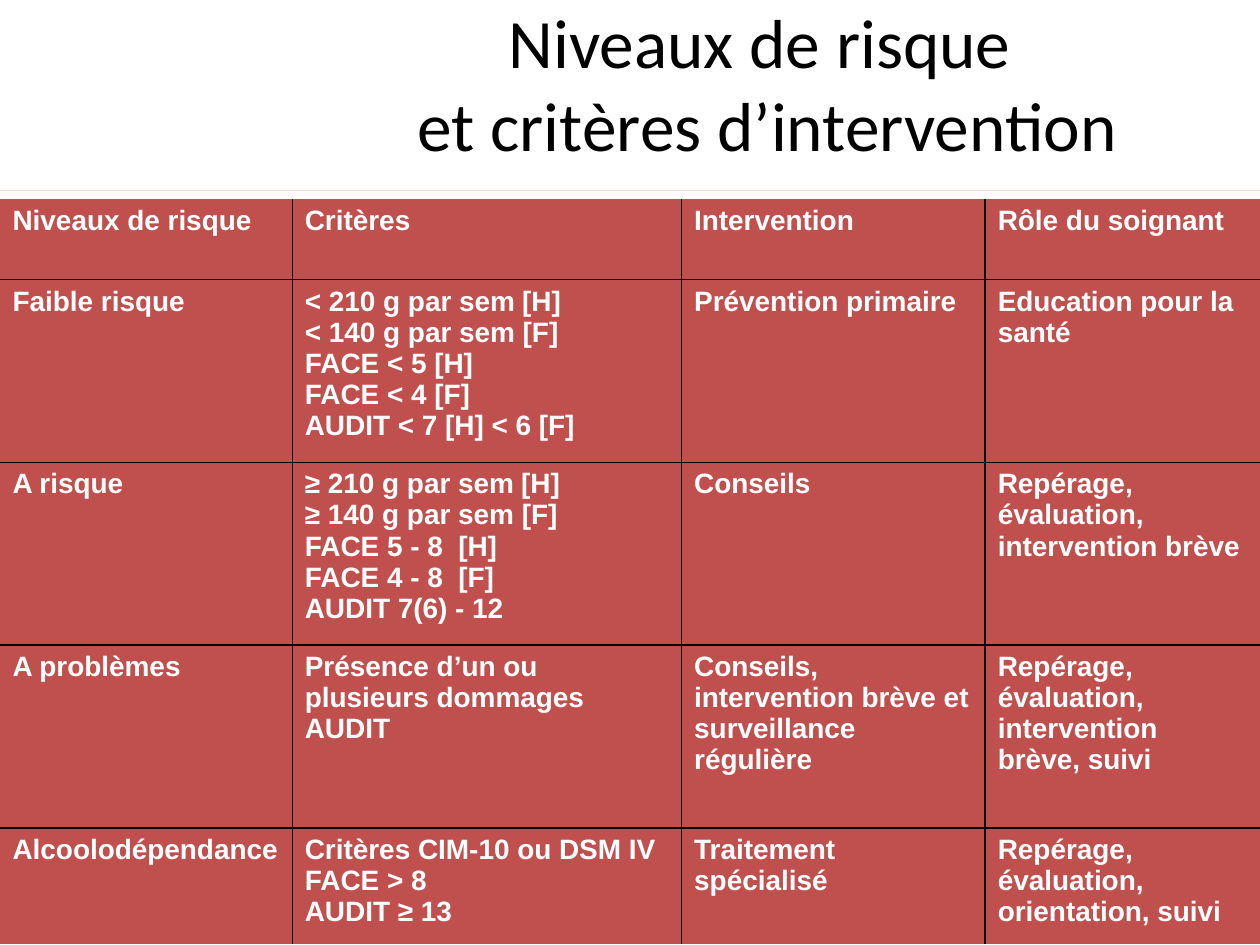
from dataclasses import dataclass

from lxml.etree import SubElement
from pptx import Presentation
from pptx.dml.color import RGBColor
from pptx.enum.shapes import MSO_SHAPE as Shape
from pptx.enum.text import MSO_ANCHOR as Anchor, MSO_AUTO_SIZE as AutoSize, PP_ALIGN as Align
from pptx.oxml.ns import qn
from pptx.util import Inches, Pt


@dataclass(frozen=True)
class Theme:
    title_font: str = "Calibri"
    table_font: str = "Arial"
    title_size: float = 39.6
    table_size: float = 16
    gap_size: float = 14
    black: str = "000000"
    white: str = "FFFFFF"
    cell: str = "C0504D"
    rule: str = "CC0000"
    border: float = 1


THEME = Theme()
TITLE = "Niveaux de risque\v et critères d’intervention"
COLUMN_WIDTHS = [2.32, 3.09, 2.41, 2.18]
ROW_HEIGHTS = [0.64, 1.45, 1.45, 1.45, 0.92]
ROWS = [
    ["Niveaux de risque", "Critères", "Intervention", "Rôle du soignant"],
    [
        "Faible risque",
        [
            ("< 210 g par sem", " ", "[H]"),
            "< 140 g par sem [F]",
            "FACE < 5 [H]",
            "FACE < 4 [F]",
            "AUDIT < 7 [H] < 6 [F]",
        ],
        "Prévention primaire",
        "Education pour la santé",
    ],
    [
        "A risque",
        [
            ("≥ 210 g par sem", " ", "[H]"),
            "≥ 140 g par sem [F]",
            "FACE 5 - 8  [H]",
            "FACE 4 - 8  [F]",
            "AUDIT 7(6) - 12",
        ],
        "Conseils",
        "Repérage, évaluation, intervention brève",
    ],
    [
        "A problèmes",
        ["Présence d’un ou plusieurs dommages", "AUDIT"],
        "Conseils, \vintervention brève et surveillance régulière",
        "Repérage,\vévaluation, intervention brève, suivi",
    ],
    [
        "Alcoolodépendance",
        ["Critères CIM-10 ou DSM IV", "FACE > 8", "AUDIT ≥ 13"],
        "Traitement spécialisé",
        "Repérage,\vévaluation, orientation, suivi",
    ],
]


def add_run(paragraph, text, *, font, size, color, bold=False):
    run = paragraph.add_run()
    run.text = text
    run.font.name = font
    run.font.size = Pt(size)
    run.font.bold = bold
    run.font.color.rgb = RGBColor.from_string(color)


def write_text(text_frame, content, *, align=Align.LEFT, **style):
    paragraphs = [content] if isinstance(content, str) else content
    for index, pieces in enumerate(paragraphs):
        paragraph = text_frame.paragraphs[0] if index == 0 else text_frame.add_paragraph()
        paragraph.alignment = align
        for piece in [pieces] if isinstance(pieces, str) else pieces:
            is_gap = piece == " "
            run_style = {**style, "size": THEME.gap_size, "bold": False} if is_gap else style
            for line_index, line in enumerate(piece.split("\v")):
                if line_index:
                    paragraph.add_line_break()
                add_run(paragraph, line, **run_style)


def set_borders(cell, visible_sides):
    properties = cell._tc.get_or_add_tcPr()
    for position, side in enumerate(("L", "R", "T", "B")):
        line = SubElement(properties, qn(f"a:ln{side}"), w=str(Pt(THEME.border)))
        if side in visible_sides:
            fill = SubElement(line, qn("a:solidFill"))
            SubElement(fill, qn("a:srgbClr"), val=THEME.black)
        else:
            SubElement(line, qn("a:noFill"))
        properties.insert(position, line)


def add_title(slide):
    title = slide.shapes.title
    title.left, title.top = Inches(2.56), Inches(0.3)
    title.width, title.height = Inches(6.94), Inches(0.7)
    text_frame = title.text_frame
    text_frame.word_wrap = True
    text_frame.auto_size = AutoSize.NONE
    text_frame.vertical_anchor = Anchor.MIDDLE
    write_text(text_frame, TITLE, align=Align.CENTER, font=THEME.title_font,
               size=THEME.title_size, color=THEME.black)


def add_rule(slide):
    rule = slide.shapes.add_shape(Shape.RECTANGLE, 0, Inches(1.51), Inches(10), 0)
    rule.shadow.inherit = False
    rule.fill.solid()
    rule.fill.fore_color.rgb = RGBColor.from_string(THEME.rule)
    rule.line.fill.background()


def add_risk_table(slide):
    row_count, column_count = len(ROWS), len(COLUMN_WIDTHS)
    table = slide.shapes.add_table(
        row_count, column_count, 0, Inches(1.58),
        Inches(sum(COLUMN_WIDTHS)), Inches(sum(ROW_HEIGHTS)),
    ).table
    table.first_row = table.horz_banding = False
    for column, width in zip(table.columns, COLUMN_WIDTHS):
        column.width = Inches(width)
    for row, height in zip(table.rows, ROW_HEIGHTS):
        row.height = Inches(height)
    for row_index, row in enumerate(ROWS):
        for column_index, content in enumerate(row):
            cell = table.cell(row_index, column_index)
            cell.fill.solid()
            cell.fill.fore_color.rgb = RGBColor.from_string(THEME.cell)
            inner_sides = {
                "L": column_index > 0,
                "R": column_index < column_count - 1,
                "T": row_index > 0,
                "B": row_index < row_count - 1,
            }
            set_borders(cell, [side for side, inner in inner_sides.items() if inner])
            write_text(cell.text_frame, content, font=THEME.table_font,
                       size=THEME.table_size, color=THEME.white, bold=True)


def main():
    presentation = Presentation()
    presentation.slide_width, presentation.slide_height = Inches(10), Inches(7.5)
    slide = presentation.slides.add_slide(presentation.slide_layouts[5])
    add_title(slide)
    add_rule(slide)
    add_risk_table(slide)
    presentation.save("out.pptx")


if __name__ == "__main__":
    main()
